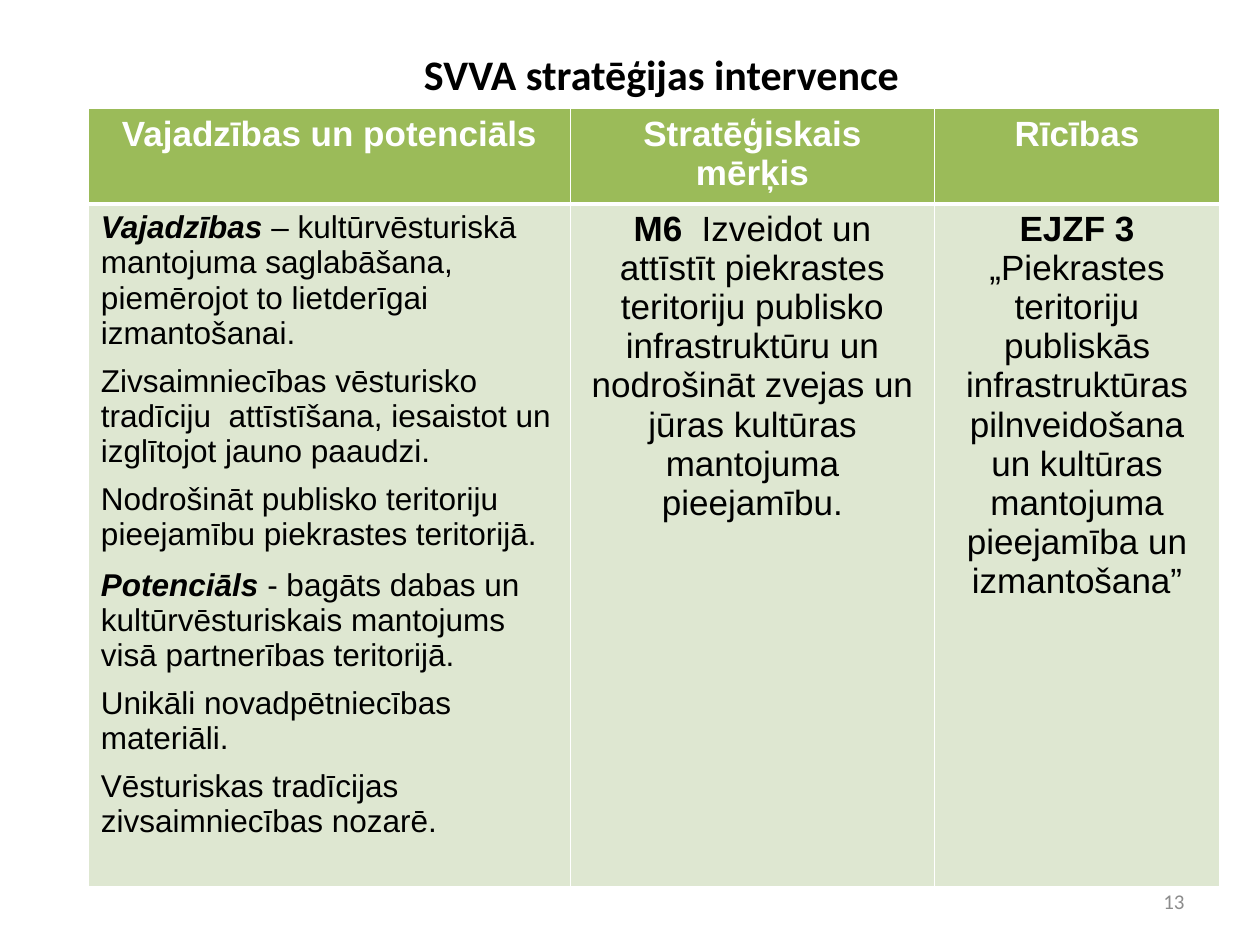
from dataclasses import dataclass

from lxml.etree import SubElement
from pptx import Presentation
from pptx.dml.color import RGBColor
from pptx.enum.text import MSO_ANCHOR, PP_ALIGN
from pptx.oxml.ns import qn
from pptx.util import Pt


@dataclass(frozen=True)
class Theme:
    heading_font: str = "Calibri"
    table_font: str = "Arial"
    black: str = "000000"
    white: str = "FFFFFF"
    header_fill: str = "9BBB59"
    body_fill: str = "DEE7D1"
    number_gray: str = "8C8C8C"
    title_size: float = 24
    table_size: float = 20
    list_size: float = 18
    number_size: float = 12
    thin_border: float = 1
    header_border: float = 3


@dataclass(frozen=True)
class Item:
    """One paragraph: a bold lead, plain text and the space above it."""
    lead: str = ""
    text: str = ""
    space_before: float = 0


@dataclass(frozen=True)
class CellStyle:
    fill: str
    color: str
    size: float
    align: PP_ALIGN
    top_border: float
    bottom_border: float
    italic_lead: bool = False


THEME = Theme()
GAP, SECTION_GAP = 7, 9
COLUMN_WIDTHS = (275.5, 208, 163)
ROW_HEIGHTS = (54.5, 390)

HEADER = CellStyle(THEME.header_fill, THEME.white, THEME.table_size,
                   PP_ALIGN.CENTER, THEME.thin_border, THEME.header_border)
BODY = CellStyle(THEME.body_fill, THEME.black, THEME.table_size,
                 PP_ALIGN.CENTER, THEME.header_border, THEME.thin_border)
NEEDS = CellStyle(THEME.body_fill, THEME.black, THEME.list_size,
                  PP_ALIGN.LEFT, THEME.header_border, THEME.thin_border, True)

HEADINGS = ("Vajadzības un potenciāls", "Stratēģiskais mērķis", "Rīcības")
NEEDS_ITEMS = (
    Item("Vajadzības", " – kultūrvēsturiskā mantojuma saglabāšana, "
         "piemērojot to lietderīgai izmantošanai."),
    Item("", "Zivsaimniecības vēsturisko tradīciju  attīstīšana, iesaistot un "
         "izglītojot jauno paaudzi.", GAP),
    Item("", "Nodrošināt publisko teritoriju pieejamību piekrastes teritorijā.", GAP),
    Item("Potenciāls", " - bagāts dabas un kultūrvēsturiskais mantojums "
         "visā partnerības teritorijā.", SECTION_GAP),
    Item("", "Unikāli novadpētniecības materiāli.", GAP),
    Item("", "Vēsturiskas tradīcijas zivsaimniecības nozarē.", GAP),
)
GOAL = Item("M6", "  Izveidot un attīstīt piekrastes teritoriju publisko "
            "infrastruktūru un nodrošināt zvejas un jūras kultūras mantojuma pieejamību.")
ACTION = Item("EJZF 3", " „Piekrastes teritoriju publiskās infrastruktūras pilnveidošana "
              "un kultūras mantojuma pieejamība un izmantošana”")

TABLE_ROWS = (
    tuple(((Item(heading),), HEADER) for heading in HEADINGS),
    ((NEEDS_ITEMS, NEEDS), ((GOAL,), BODY), ((ACTION,), BODY)),
)


def format_font(font, name: str, size: float, color: str,
                bold: bool = False, italic: bool = False) -> None:
    font.name, font.size = name, Pt(size)
    font.bold, font.italic = bold, italic
    font.color.rgb = RGBColor.from_string(color)


def set_borders(cell, style: CellStyle) -> None:
    properties = cell._tc.get_or_add_tcPr()
    widths = {"a:lnL": THEME.thin_border, "a:lnR": THEME.thin_border,
              "a:lnT": style.top_border, "a:lnB": style.bottom_border}
    for position, (tag, width) in enumerate(widths.items()):
        line = SubElement(properties, qn(tag), w=str(Pt(width)))
        fill = SubElement(line, qn("a:solidFill"))
        SubElement(fill, qn("a:srgbClr"), val=THEME.white)
        properties.insert(position, line)  # borders precede the cell fill


def fill_cell(cell, items: tuple[Item, ...], style: CellStyle) -> None:
    cell.fill.solid()
    cell.fill.fore_color.rgb = RGBColor.from_string(style.fill)
    set_borders(cell, style)
    text_frame = cell.text_frame
    for index, item in enumerate(items):
        paragraph = text_frame.add_paragraph() if index else text_frame.paragraphs[0]
        paragraph.alignment = style.align
        paragraph.space_before = Pt(item.space_before)
        for text, is_lead in ((item.lead, True), (item.text, False)):
            if text:
                run = paragraph.add_run()
                run.text = text
                format_font(run.font, THEME.table_font, style.size, style.color,
                            is_lead, is_lead and style.italic_lead)


def set_line(shape, text: str, align: PP_ALIGN, size: float, color: str,
             bold: bool = False) -> None:
    text_frame = shape.text_frame
    text_frame.text = text
    text_frame.word_wrap = True
    text_frame.vertical_anchor = MSO_ANCHOR.MIDDLE
    paragraph = text_frame.paragraphs[0]
    paragraph.alignment = align
    format_font(paragraph.runs[0].font, THEME.heading_font, size, color, bold)


def add_strategy_table(slide) -> None:
    table = slide.shapes.add_table(
        len(ROW_HEIGHTS), len(COLUMN_WIDTHS), Pt(50.5), Pt(62),
        Pt(sum(COLUMN_WIDTHS)), Pt(sum(ROW_HEIGHTS))).table
    for column, width in zip(table.columns, COLUMN_WIDTHS):
        column.width = Pt(width)
    for row, height, contents in zip(table.rows, ROW_HEIGHTS, TABLE_ROWS):
        row.height = Pt(height)
        for cell, (items, style) in zip(row.cells, contents):
            fill_cell(cell, items, style)


def main() -> None:
    presentation = Presentation()
    presentation.slide_width, presentation.slide_height = Pt(720), Pt(540)
    slide = presentation.slides.add_slide(presentation.slide_layouts[5])

    # Title
    title = slide.shapes.title
    title.left, title.top, title.width, title.height = Pt(72), Pt(22), Pt(612), Pt(40)
    set_line(title, "SVVA stratēģijas intervence", PP_ALIGN.CENTER,
             THEME.title_size, THEME.black, bold=True)

    # Needs, goal and actions
    add_strategy_table(slide)

    # Slide number
    number = slide.shapes.add_textbox(Pt(516), Pt(500.5), Pt(168), Pt(28.75))
    set_line(number, "13", PP_ALIGN.RIGHT, THEME.number_size, THEME.number_gray)

    presentation.save("out.pptx")


if __name__ == "__main__":
    main()
